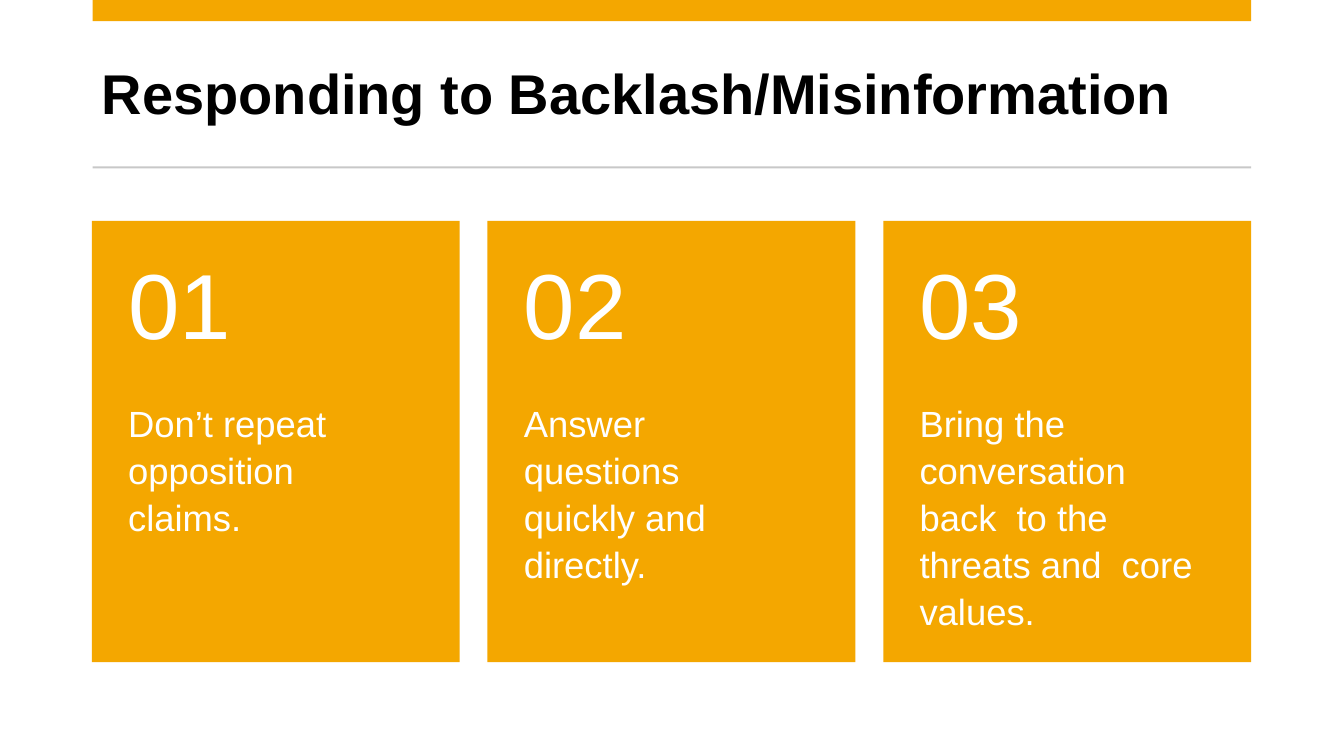
from dataclasses import dataclass

from pptx import Presentation
from pptx.dml.color import RGBColor
from pptx.enum.shapes import MSO_SHAPE as Preset
from pptx.enum.text import MSO_ANCHOR as Anchor, PP_ALIGN as Align
from pptx.shapes.autoshape import Shape
from pptx.slide import Slide
from pptx.text.text import _Paragraph as Paragraph
from pptx.util import Inches, Length, Pt


@dataclass(frozen=True)
class Theme:
    font: str = "Arial"
    amber: RGBColor = RGBColor(0xF4, 0xA7, 0x00)
    grey: RGBColor = RGBColor(0xC8, 0xC8, 0xC8)
    black: RGBColor = RGBColor(0x00, 0x00, 0x00)
    white: RGBColor = RGBColor(0xFF, 0xFF, 0xFF)
    title_size: int = 40
    number_size: int = 66
    body_size: int = 26


@dataclass(frozen=True)
class Box:
    """A rectangle in percent of the slide's width and height."""
    left: float
    top: float
    width: float
    height: float


@dataclass(frozen=True)
class Card:
    number: str
    advice: str


THEME = Theme()
SLIDE_WIDTH, SLIDE_HEIGHT = Inches(13.33), Inches(7.5)

TITLE = Box(7.58, 7.73, 81.1, 9.2)
TOP_BAR = Box(6.9, 0, 86.2, 2.8)
RULE = Box(6.9, 22, 86.2, 0.27)
CARD_ROW = Box(6.83, 29.2, 86.27, 58.4)
CARD_WIDTH = 27.38

CARDS = [
    Card("01", "Don’t repeat  opposition  claims."),
    Card("02", "Answer questions  quickly and  directly."),
    Card("03", "Bring the  conversation back  to the threats and  core values."),
]


def across(percent: float) -> Length:
    return Length(round(SLIDE_WIDTH * percent / 100))


def down(percent: float) -> Length:
    return Length(round(SLIDE_HEIGHT * percent / 100))


def place(box: Box) -> tuple[Length, Length, Length, Length]:
    return across(box.left), down(box.top), across(box.width), down(box.height)


def set_insets(shape: Shape, left: float, top: float, right: float) -> None:
    """Wrap the text from the top, with insets in percent of the slide."""
    frame = shape.text_frame
    frame.word_wrap = True
    frame.vertical_anchor = Anchor.TOP
    frame.margin_left, frame.margin_right = across(left), across(right)
    frame.margin_top, frame.margin_bottom = down(top), 0


def format_paragraph(paragraph: Paragraph, size: int, color: RGBColor,
                     bold: bool = False) -> None:
    paragraph.alignment = Align.LEFT
    for run in paragraph.runs:
        run.font.name = THEME.font
        run.font.size = Pt(size)
        run.font.bold = bold
        run.font.color.rgb = color


def add_block(slide: Slide, box: Box, color: RGBColor) -> Shape:
    block = slide.shapes.add_shape(Preset.RECTANGLE, *place(box))
    block.shadow.inherit = False
    block.fill.solid()
    block.fill.fore_color.rgb = color
    block.line.fill.background()
    return block


def add_title(slide: Slide, text: str) -> None:
    title = slide.shapes.add_textbox(*place(TITLE))
    set_insets(title, 0, 0, 0)
    title.text_frame.text = text
    format_paragraph(title.text_frame.paragraphs[0], THEME.title_size,
                     THEME.black, bold=True)


def add_card(slide: Slide, card: Card, box: Box) -> None:
    block = add_block(slide, box, THEME.amber)
    set_insets(block, left=2.7, top=3.47, right=3.83)
    block.text_frame.text = f"{card.number}\n{card.advice}"
    number, advice = block.text_frame.paragraphs
    format_paragraph(number, THEME.number_size, THEME.white)
    format_paragraph(advice, THEME.body_size, THEME.white)
    advice.line_spacing = 1.08
    advice.space_before = Pt(28.2)


def main() -> None:
    presentation = Presentation()
    presentation.slide_width = SLIDE_WIDTH
    presentation.slide_height = SLIDE_HEIGHT
    slide = presentation.slides.add_slide(presentation.slide_layouts[6])

    add_title(slide, "Responding to Backlash/Misinformation")
    add_block(slide, TOP_BAR, THEME.amber)
    add_block(slide, RULE, THEME.grey)

    pitch = (CARD_ROW.width - CARD_WIDTH) / (len(CARDS) - 1)
    for column, card in enumerate(CARDS):
        left = CARD_ROW.left + column * pitch
        add_card(slide, card, Box(left, CARD_ROW.top, CARD_WIDTH, CARD_ROW.height))

    presentation.save("out.pptx")


if __name__ == "__main__":
    main()
